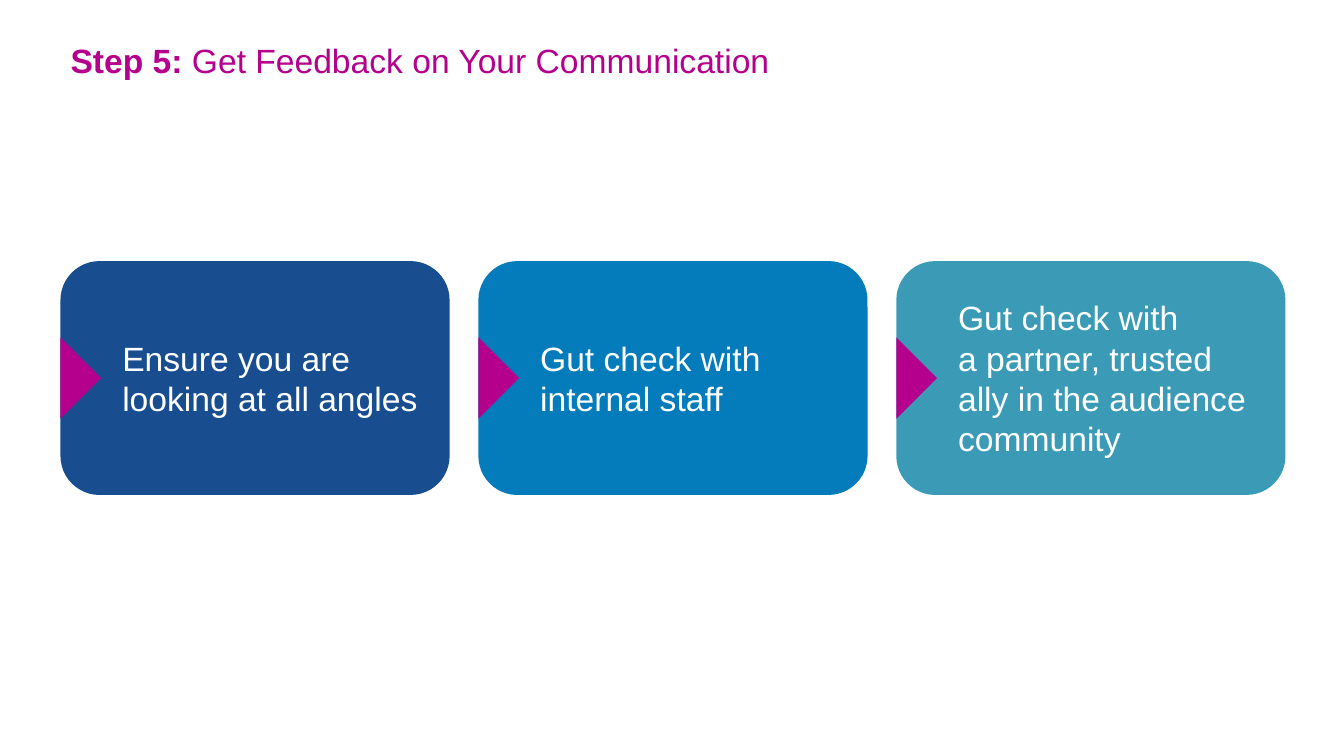
"""Build the slide on getting feedback on a communication."""
from pptx import Presentation
from pptx.dml.color import RGBColor
from pptx.enum.shapes import MSO_SHAPE as Shape
from pptx.enum.text import MSO_ANCHOR as Anchor, PP_ALIGN as Align
from pptx.util import Inches, Pt

HEX = {"paper": "FEFFFE", "accent": "B4008C", "navy": "184E90",
       "blue": "047BBA", "teal": "3B9BB7"}
TITLE = [("Step 5: ", True), ("Get Feedback on Your Communication", False)]
CARDS = [
    ("navy", ["Ensure you are looking at all angles"]),
    ("blue", ["Gut check with internal staff"]),
    ("teal", ["Gut check with", "a partner, trusted",
              "ally in the audience community"]),
]
WIDE, HIGH = 13.33, 7.5
LEFT, TOP, CARD_W, CARD_H = 0.6, 2.59, 3.86, 2.32
STEP, MARK, INDENT = 4.145, 0.57, 0.5
FONT = {"name": "Arial", "size": Pt(24)}
FRAME = {"word_wrap": True, "vertical_anchor": Anchor.MIDDLE}
INSET = {"margin_left": 0, "margin_right": 0, "margin_top": 0, "margin_bottom": 0}


def color(name):
    return RGBColor.from_string(HEX[name])


def apply(target, values):
    for key, value in values.items():
        setattr(target, key, value)


def write(para, text, tint, bold=False):
    run = para.add_run()
    run.text = text
    apply(run.font, {**FONT, "bold": bold})
    run.font.color.rgb = color(tint)


def draw(group, kind, box, tint):
    shape = group.shapes.add_shape(kind, *map(Inches, box))
    shape.shadow.inherit = False
    shape.fill.solid()
    shape.fill.fore_color.rgb = color(tint)
    shape.line.fill.background()
    return shape


def add_title(slide):
    title = slide.shapes.title
    box = (LEFT, -0.1, 11.5, 1.45)
    apply(title, dict(zip(("left", "top", "width", "height"), map(Inches, box))))
    apply(title.text_frame, FRAME)
    para = title.text_frame.paragraphs[0]
    apply(para, {"alignment": Align.LEFT, "line_spacing": 0.9})
    for text, bold in TITLE:
        write(para, text, "accent", bold)


def add_card(slide, col, tint, lines):
    left = LEFT + col * STEP
    group = slide.shapes.add_group_shape()
    card = draw(group, Shape.ROUNDED_RECTANGLE, (left, TOP, CARD_W, CARD_H), tint)
    frame = card.text_frame
    apply(frame, {**FRAME, **INSET})
    for row, line in enumerate(lines):
        para = frame.add_paragraph() if row else frame.paragraphs[0]
        apply(para, {"level": 1, "alignment": Align.LEFT})
        para._p.get_or_add_pPr().set("marL", str(Inches(INDENT)))
        write(para, line, "paper")
    mid = TOP + CARD_H / 2
    box = (left - MARK / 2, mid - MARK / 2, MARK, MARK)
    draw(group, Shape.RIGHT_TRIANGLE, box, "accent").rotation = 225


def main():
    deck = Presentation()
    apply(deck, {"slide_width": Inches(WIDE), "slide_height": Inches(HIGH)})
    slide = deck.slides.add_slide(deck.slide_layouts[5])
    slide.background.fill.solid()
    slide.background.fill.fore_color.rgb = color("paper")
    add_title(slide)
    for col, (tint, lines) in enumerate(CARDS):
        add_card(slide, col, tint, lines)
    deck.save("out.pptx")


if __name__ == "__main__":
    main()
